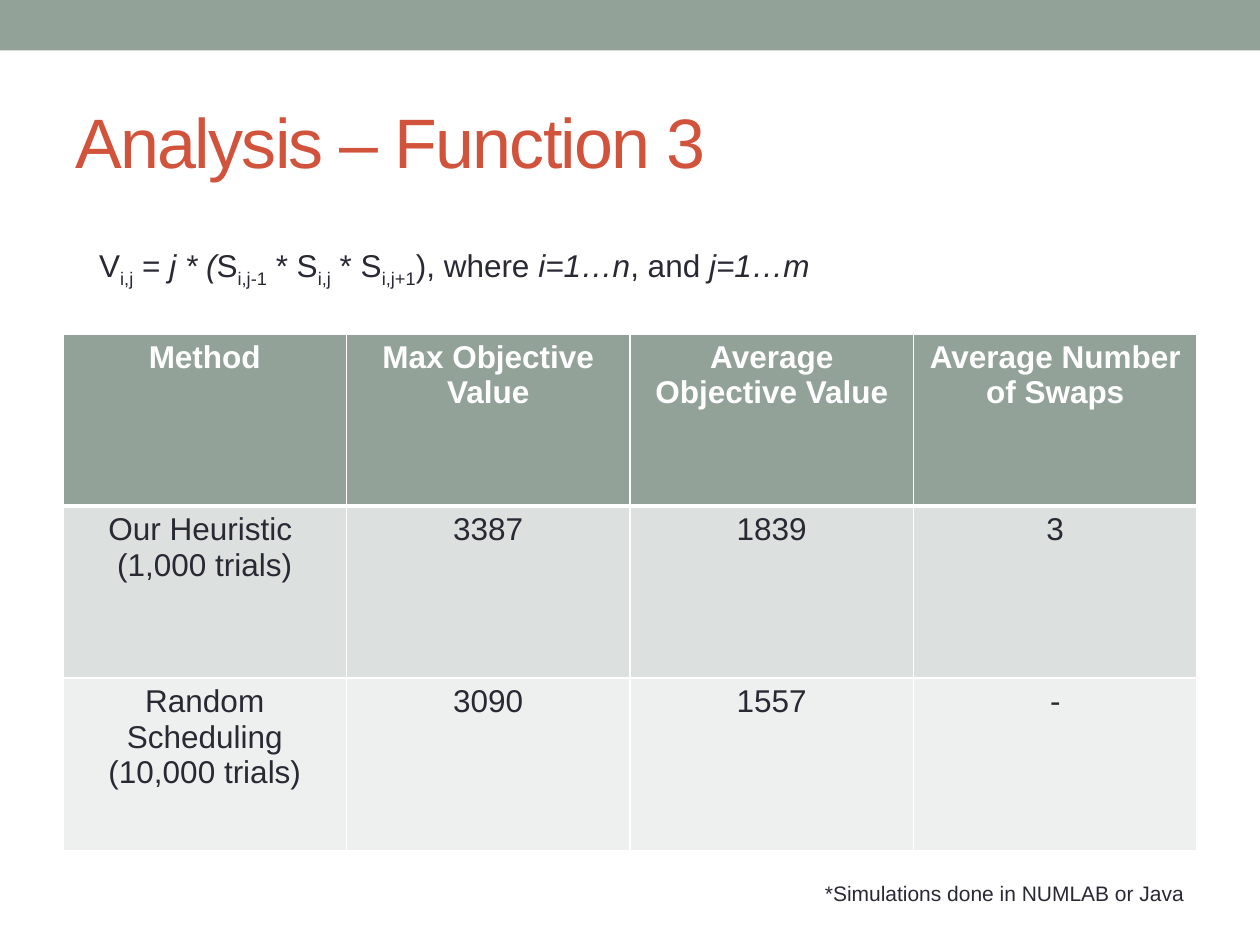
from lxml.etree import SubElement
from pptx import Presentation
from pptx.dml.color import RGBColor
from pptx.enum.shapes import MSO_SHAPE
from pptx.enum.text import MSO_ANCHOR, PP_ALIGN
from pptx.oxml.ns import qn
from pptx.util import Cm, Pt

COLORS = {"sage": "93A299", "rust": "D2533C", "ink": "292934",
          "white": "FFFFFF", "band1": "DCE0DE", "band2": "EEF0EF"}


def add_run(p, text, color, **fmt):
    r = p.add_run()
    r.text = text
    r.font.color.rgb = RGBColor.from_string(COLORS[color])
    for name, value in {"name": "Arial", "size": Pt(18), **fmt}.items():
        setattr(r.font, name, value)
    return r


def add_border(cell, side, width):
    ln = SubElement(cell._tc.get_or_add_tcPr(), qn(f"a:ln{side}"), w=str(Pt(width)))
    fill = SubElement(ln, qn("a:solidFill"))
    SubElement(fill, qn("a:srgbClr"), val=COLORS["white"])


prs = Presentation()
prs.slide_width, prs.slide_height = Cm(25.4), Cm(19.05)
s = prs.slides.add_slide(prs.slide_layouts[5])

bar = s.shapes.add_shape(MSO_SHAPE.RECTANGLE, 0, 0, prs.slide_width, Cm(1.02))
bar.shadow.inherit = False
bar.fill.solid()
bar.fill.fore_color.rgb = RGBColor.from_string(COLORS["sage"])
bar.line.fill.background()

title = s.shapes.title
title.left, title.top, title.width, title.height = Cm(1.27), Cm(1.47), Cm(22.86), Cm(2.74)
title.text_frame.vertical_anchor = MSO_ANCHOR.MIDDLE
p = title.text_frame.paragraphs[0]
p.alignment = PP_ALIGN.LEFT
r = add_run(p, "Analysis – Function 3", "rust", size=Pt(40))
r.font._element.set("spc", "-100")

rows = [
    ["Method", "Max Objective Value", "Average Objective Value", "Average Number of Swaps"],
    ["Our Heuristic \n(1,000 trials)", "3387", "1839", "3"],
    ["Random Scheduling (10,000 trials)", "3090", "1557", "-"],
]
styles = [("sage", "white", True), ("band1", "ink", False), ("band2", "ink", False)]
table = s.shapes.add_table(3, 4, Cm(1.27), Cm(6.73), Cm(22.86), Cm(10.41)).table
for i, (row, (fill, color, bold)) in enumerate(zip(rows, styles)):
    for j, text in enumerate(row):
        cell = table.cell(i, j)
        widths = {"L": 1, "R": 1, "T": 3 if i == 1 else 1, "B": 3 if i == 0 else 1}
        for side, width in widths.items():
            add_border(cell, side, width)
        cell.fill.solid()
        cell.fill.fore_color.rgb = RGBColor.from_string(COLORS[fill])
        tf = cell.text_frame
        for k, line in enumerate(text.split("\n")):
            p = tf.add_paragraph() if k else tf.paragraphs[0]
            p.alignment = PP_ALIGN.CENTER
            add_run(p, line, color, bold=bold)

note = [("*Simulations done in NUMLAB or Java", "")]
formula = [("V", ""), ("i,j", "sub"), (" = ", ""), ("j * (", "italic"), ("S", ""),
           ("i,j-1", "sub"), (" * S", ""), ("i,j", "sub"), (" * S", ""),
           ("i,j+1", "sub"), ("), where ", ""), ("i=1…n", "italic"),
           (", and ", ""), ("j=1…m", "italic")]
boxes = [(note, 12, (16.38, 17.63, 7.82, 0.76)),
         (formula, 18, (1.75, 4.83, 15.39, 1.02))]
for parts, size, box in boxes:
    tf = s.shapes.add_textbox(*map(Cm, box)).text_frame
    tf.word_wrap = False
    for text, style in parts:
        r = add_run(tf.paragraphs[0], text, "ink", size=Pt(size), italic=style == "italic")
        if style == "sub":
            r.font._element.set("baseline", "-25000")

prs.save("out.pptx")
